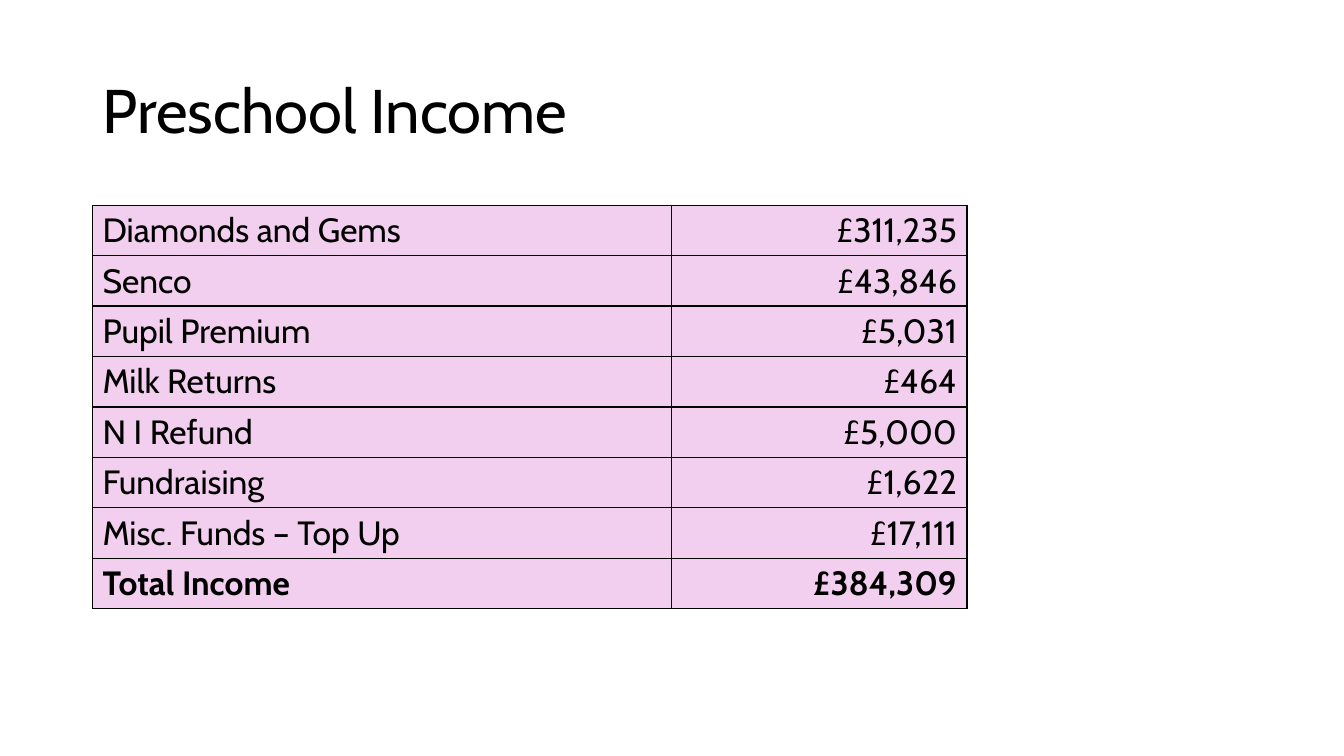
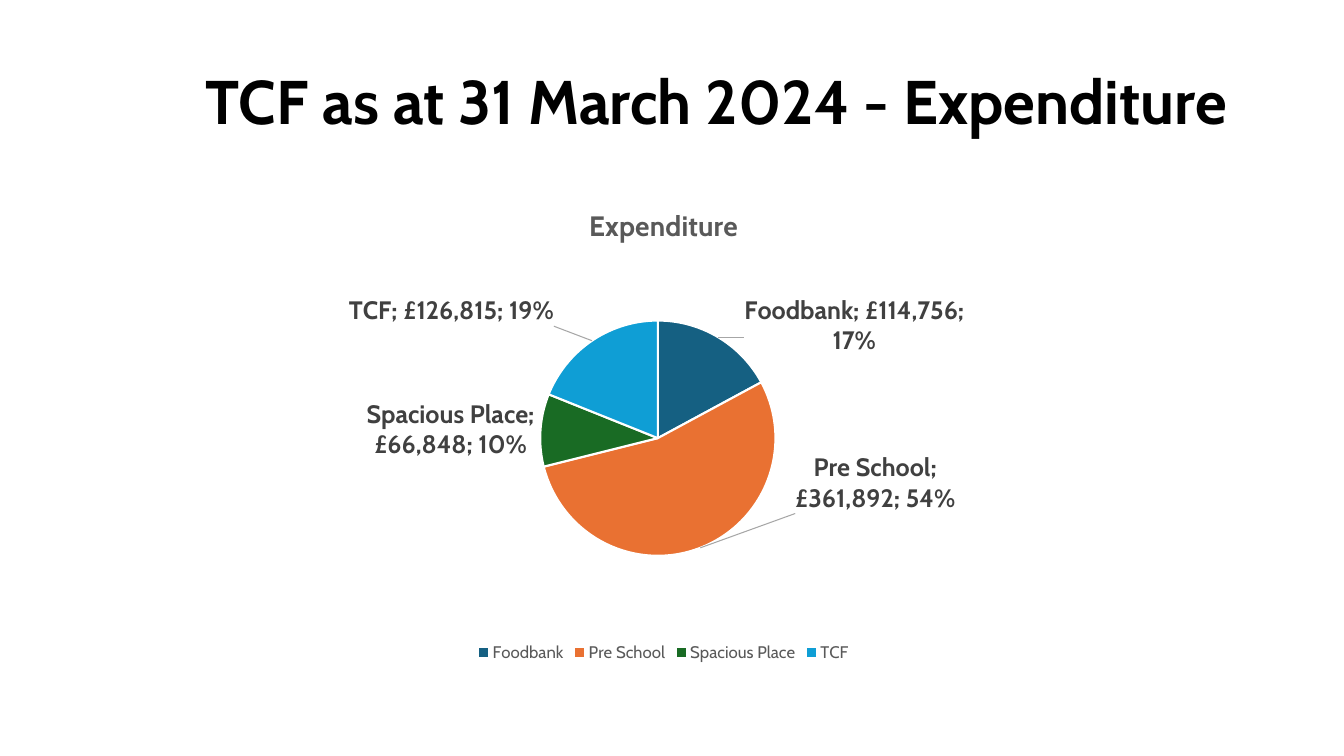
from copy import deepcopy

from lxml.etree import SubElement
from pptx import Presentation
from pptx.chart.data import CategoryChartData
from pptx.dml.color import RGBColor
from pptx.enum.chart import XL_CHART_TYPE, XL_LABEL_POSITION, XL_LEGEND_POSITION
from pptx.enum.text import MSO_ANCHOR, PP_ALIGN
from pptx.oxml import parse_xml
from pptx.oxml.ns import nsdecls, qn
from pptx.util import Cm, Pt

BLACK, WHITE = "000000", "FFFFFF"
PINK = "F2CFEE"
GREY, DARK_GREY, LEADER_GREY = "595959", "404040", "A6A6A6"

INCOME = [
    ("Diamonds and Gems", "£311,235"),
    ("Senco", "£43,846"),
    ("Pupil Premium", "£5,031"),
    ("Milk Returns", "£464"),
    ("N I Refund", "£5,000"),
    ("Fundraising", "£1,622"),
    ("Misc. Funds – Top Up", "£17,111"),
    ("Total Income", "£384,309"),
]

# name, amount, colour, label offset as a share of the chart's size
EXPENDITURE = [
    ("Foodbank", 114756, "156082", (0.02, 0.05)),
    ("Pre School", 361892, "E97132", (0.08, -0.21)),
    ("Spacious Place", 66848, "196B24", None),
    ("TCF", 126815, "0F9ED5", (-0.03, -0.02)),
]


def rgb(value):
    return RGBColor.from_string(value)


def layout_xml(**values):
    """Manual chart layout; the keywords are its elements, in schema order."""
    items = "".join(f'<c:{k} val="{v}"/>' for k, v in values.items())
    return parse_xml(f'<c:layout {nsdecls("c")}><c:manualLayout>{items}'
                     "</c:manualLayout></c:layout>")


class Deck:
    font = "Cabin"

    def __init__(self):
        self.prs = Presentation()
        self.prs.slide_width, self.prs.slide_height = Cm(33.87), Cm(19.05)
        self.s = None

    def slide(self):
        self.s = self.prs.slides.add_slide(self.prs.slide_layouts[6])

    def style(self, font, size, color=BLACK, bold=False):
        values = {"name": self.font, "size": Pt(size), "bold": bold}
        for key, value in values.items():
            setattr(font, key, value)
        font.color.rgb = rgb(color)

    def title(self, text, box, bold=False, anchor=MSO_ANCHOR.TOP, spacing=1.0):
        tf = self.s.shapes.add_textbox(*map(Cm, box)).text_frame
        tf.word_wrap = True
        tf.vertical_anchor = anchor
        p = tf.paragraphs[0]
        p.line_spacing = spacing
        r = p.add_run()
        r.text = text
        self.style(r.font, 44, bold=bold)

    def cell(self, cell, text, align, bold):
        p = cell.text_frame.paragraphs[0]
        p.alignment = align
        r = p.add_run()
        r.text = text
        self.style(r.font, 24, bold=bold)
        cell.fill.solid()
        cell.fill.fore_color.rgb = rgb(PINK)
        for i, side in enumerate(("lnL", "lnR", "lnT", "lnB")):
            cell._tc.tcPr.insert(i, parse_xml(
                f'<a:{side} {nsdecls("a")} w="{Pt(1)}"><a:solidFill>'
                f'<a:srgbClr val="{BLACK}"/></a:solidFill></a:{side}>'))

    def table(self, rows, left, top, widths, row_height):
        """Two-column table whose last row is a bold total."""
        table = self.s.shapes.add_table(
            len(rows), len(widths), Cm(left), Cm(top),
            Cm(sum(widths)), Cm(row_height * len(rows))).table
        for column, width in zip(table.columns, widths):
            column.width = Cm(width)
        for i, row in enumerate(rows):
            for j, align in enumerate((PP_ALIGN.LEFT, PP_ALIGN.RIGHT)):
                self.cell(table.cell(i, j), row[j], align, i == len(rows) - 1)

    def pie(self, name, rows, box, plot_area):
        names, amounts, colors, offsets = zip(*rows)
        data = CategoryChartData(number_format='"£"#,##0')
        data.categories = names
        data.add_series(name, amounts)
        chart = self.s.shapes.add_chart(
            XL_CHART_TYPE.PIE, *map(Cm, box), data).chart
        self.style(chart.font, 10)

        chart.has_title = True
        r = chart.chart_title.text_frame.paragraphs[0].add_run()
        r.text = name
        self.style(r.font, 20, GREY, True)
        chart.chart_title.include_in_layout = False

        chart.has_legend = True
        chart.legend.position = XL_LEGEND_POSITION.BOTTOM
        chart.legend.include_in_layout = False
        self.style(chart.legend.font, 12, GREY)

        area = chart._chartSpace.chart.plotArea
        for old in area.findall(qn("c:layout")):
            area.remove(old)
        x, y, w, h = plot_area
        area.insert(0, layout_xml(layoutTarget="inner", xMode="edge",
                                  yMode="edge", x=x, y=y, w=w, h=h))

        plot = chart.plots[0]
        plot.vary_by_categories = True
        series = plot.series[0]
        for i, color in enumerate(colors):
            fmt = series.points[i].format
            fmt.fill.solid()
            fmt.fill.fore_color.rgb = rgb(color)
            fmt.line.color.rgb = rgb(WHITE)
            fmt.line.width = Pt(1.5)
        self.pie_labels(series.data_labels, offsets)

    def pie_labels(self, labels, offsets):
        """Amounts take the data's number format, so shares stay percentages."""
        values = {
            "show_value": True, "show_percentage": True,
            "show_category_name": True,
            "position": XL_LABEL_POSITION.BEST_FIT,
        }
        for key, value in values.items():
            setattr(labels, key, value)
        self.style(labels.font, 18, DARK_GREY, True)

        group = labels._element
        for old in group.findall(qn("c:showLeaderLines")):
            group.remove(old)
        shared = list(group)
        moved = [(i, o) for i, o in enumerate(offsets) if o]
        for place, (i, (x, y)) in enumerate(moved):
            label = parse_xml(f'<c:dLbl {nsdecls("c")}><c:idx val="{i}"/></c:dLbl>')
            label.append(layout_xml(x=x, y=y))
            label.extend(deepcopy(child) for child in shared)
            group.insert(place, label)
        SubElement(group, qn("c:showLeaderLines")).set("val", "1")
        group.append(parse_xml(
            f'<c:leaderLines {nsdecls("c", "a")}><c:spPr><a:ln w="{Pt(0.75)}">'
            f'<a:solidFill><a:srgbClr val="{LEADER_GREY}"/></a:solidFill>'
            "</a:ln></c:spPr></c:leaderLines>"))


def main():
    deck = Deck()

    deck.slide()
    deck.title("Preschool Income", (2.33, 1.01, 29.21, 3.68),
               anchor=MSO_ANCHOR.MIDDLE, spacing=0.9)
    deck.table(INCOME, 2.33, 5.17, (14.6, 7.44), 1.27)

    deck.slide()
    deck.pie("Expenditure", EXPENDITURE, (2.12, 4.69, 29.21, 12.1),
             (0.39, 0.28, 0.21, 0.49))
    deck.title("TCF as at 31 March 2024 - Expenditure",
               (4.93, 1.45, 27.76, 2.13), bold=True)

    deck.prs.save("out.pptx")


if __name__ == "__main__":
    main()
